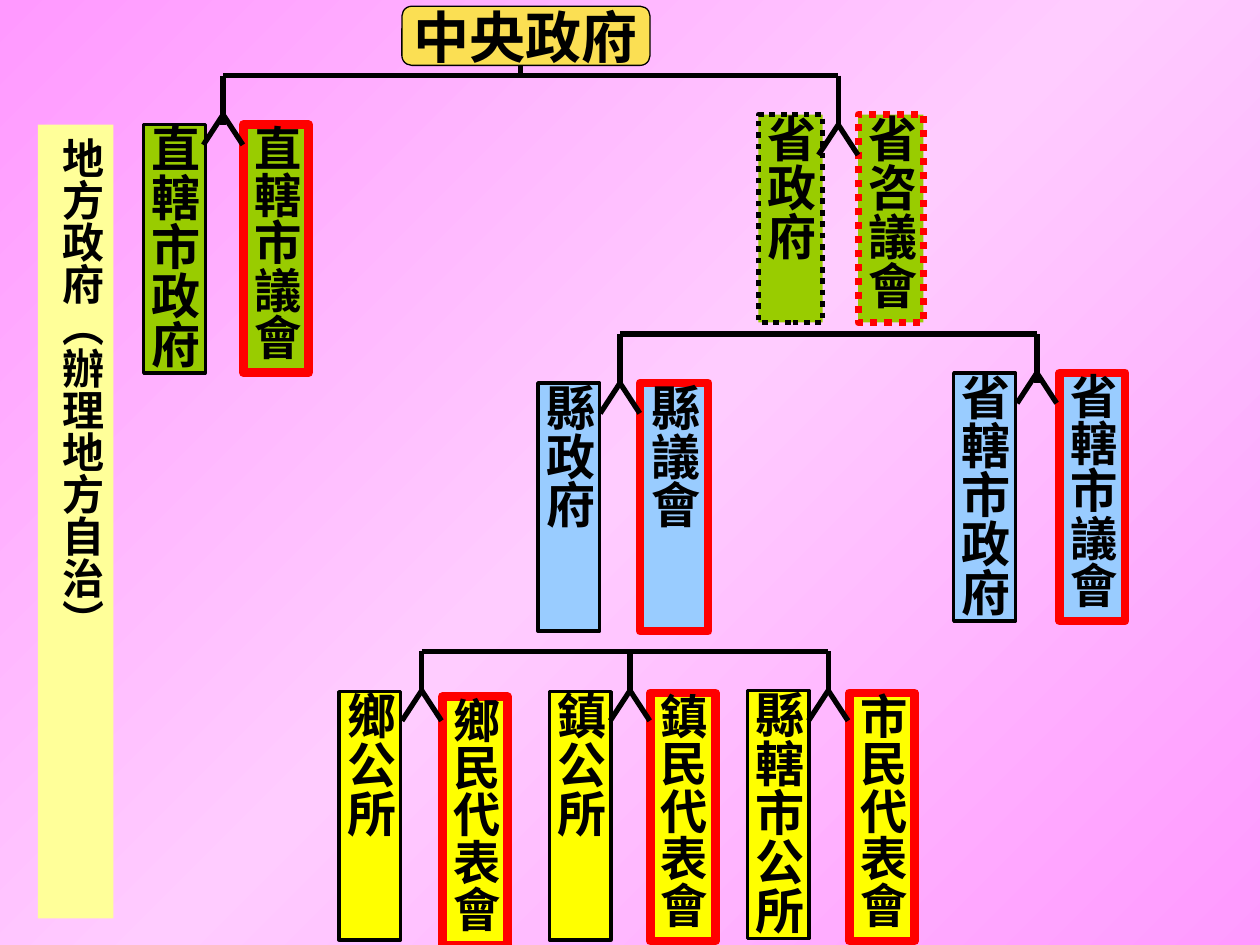
import copy
from dataclasses import dataclass

import pptx
import pptx.dml.color
import pptx.enum.dml
import pptx.enum.shapes
import pptx.enum.text
import pptx.oxml
import pptx.util

Pt = pptx.util.Pt
RGB = pptx.dml.color.RGBColor.from_string
ALIGN = pptx.enum.text.PP_ALIGN
ANCHOR = pptx.enum.text.MSO_ANCHOR
SHAPE = pptx.enum.shapes.MSO_SHAPE
DOTTED = pptx.enum.dml.MSO_LINE.ROUND_DOT


@dataclass(frozen=True)
class Theme:
    font: str = "Arial"
    ink: str = "000000"
    council: str = "FF0000"
    root: str = "FBDF53"
    province: str = "99CC00"
    county: str = "99CCFF"
    town: str = "FFFF00"
    band: str = "FFFF99"
    backdrop: tuple = ("FF99FF", "FFCCFF", "FF99FF")
    root_size: float = 32
    node_size: float = 28
    tight_size: float = 27
    band_size: float = 24
    link: float = 3


T = Theme()


@dataclass(frozen=True)
class Node:
    """One organ; councils are outlined in red."""
    text: str
    left: float
    top: float
    fill: str
    council: bool = False
    width: float = 0
    height: float = 141.8
    size: float = T.node_size
    dotted: bool = False
    align: ALIGN = ALIGN.CENTER


@dataclass(frozen=True)
class Branch:
    """A drop from a level's bar, ending in a fork."""
    x: float
    fork: float
    drop_end: float


@dataclass(frozen=True)
class Level:
    bar: float
    branches: tuple


NODES = (
    Node("直轄市政府", 82.1, 71.3, T.province, align=ALIGN.LEFT),
    Node("直轄市議會", 139, 71.3, T.province, True, size=T.tight_size, align=ALIGN.LEFT),
    Node("省政府", 433.4, 65.5, T.province, width=36.7, height=118.8, dotted=True),
    Node("省咨議會", 490.3, 65.5, T.province, True, height=118.8, dotted=True),
    Node("省轄市政府", 545, 213.1, T.county),
    Node("省轄市議會", 605.5, 213.1, T.county, True, size=T.tight_size),
    Node("縣議會", 365.8, 218.9, T.county, True, width=38.9),
    Node("縣政府", 307.4, 218.9, T.county),
    Node("縣轄市公所", 427, 394.6, T.town),
    Node("市民代表會", 485.3, 396, T.town, True, size=T.tight_size),
    Node("鎮民代表會", 371.5, 396, T.town, True, size=T.tight_size),
    Node("鄉民代表會", 252.7, 398.2, T.town, True, size=T.tight_size),
    Node("鄉公所", 193.7, 395.3, T.town),
    Node("鎮公所", 313.9, 395.3, T.town),
)

LEVELS = (
    Level(43.2, (Branch(127.5, 65.5, 71.3), Branch(479, 71.3, 71.3))),
    Level(190.8, (Branch(354.3, 218.9, 218.9), Branch(592.5, 213.1, 218.9))),
    Level(372.2, tuple(Branch(x, 394.6, 394.6) for x in (241, 360, 473.3))),
)
FORK_DX, FORK_DY = 11.3, 17.3


def add_box(slide, kind: SHAPE, box: tuple, text: str, size: float, fill: str,
            align: ALIGN, vertical: bool = True, inset: bool = False):
    s = slide.shapes.add_shape(kind, *map(Pt, box))
    s.shadow.inherit = False
    s.fill.solid()
    s.fill.fore_color.rgb = RGB(fill)
    s.line.fill.background()
    tf = s.text_frame
    tf.text = text
    tf.word_wrap = vertical
    tf.vertical_anchor = ANCHOR.TOP if inset else ANCHOR.MIDDLE
    if not inset:
        tf.margin_left = tf.margin_right = tf.margin_top = tf.margin_bottom = 0
    if vertical:
        tf.auto_size = pptx.enum.text.MSO_AUTO_SIZE.SHAPE_TO_FIT_TEXT
        s.element.xpath(".//a:bodyPr")[0].set("vert", "eaVert")
    p = tf.paragraphs[0]
    p.alignment = align
    f = p.runs[0].font
    f.name, f.size, f.bold = T.font, Pt(size), True
    f.color.rgb = RGB(T.ink)
    return s


def outline(s, color: str, width: float) -> None:
    s.line.color.rgb = RGB(color)
    s.line.width = Pt(width)


def add_node(slide, n: Node) -> None:
    width = n.width or (37.4 if n.council else 35.3)
    s = add_box(slide, SHAPE.RECTANGLE, (n.left, n.top, width, n.height),
                n.text, n.size, n.fill, n.align)
    solid, dots = (5, 4) if n.council else (2, 3.25)
    outline(s, T.council if n.council else T.ink, dots if n.dotted else solid)
    if n.dotted:
        s.line.dash_style = DOTTED


def add_link(slide, x1: float, y1: float, x2: float, y2: float,
             width: float = T.link) -> None:
    c = slide.shapes.add_connector(pptx.enum.shapes.MSO_CONNECTOR.STRAIGHT,
                                   *map(Pt, (x1, y1, x2, y2)))
    outline(c, T.ink, width)
    sp_pr = c.element.xpath("./p:spPr")[0]
    sp_pr.append(pptx.oxml.parse_xml(
        '<a:effectLst xmlns:a="http://schemas.openxmlformats.org/drawingml/2006/main"/>'))


def add_level(slide, level: Level) -> None:
    xs = [b.x for b in level.branches]
    add_link(slide, min(xs), level.bar, max(xs), level.bar)
    for b in level.branches:
        add_link(slide, b.x, level.bar, b.x, b.drop_end)
        for dx in (-FORK_DX, FORK_DX):
            add_link(slide, b.x, b.fork, b.x + dx, b.fork + FORK_DY)


def paint_background(slide) -> None:
    fill = slide.background.fill
    fill.gradient()
    fill.gradient_angle = 315
    first = slide.element.xpath(".//p:bg//a:gs")[0]
    first.addnext(copy.deepcopy(first))
    for i, (stop, color) in enumerate(zip(fill.gradient_stops, T.backdrop)):
        stop.position = i / 2
        stop.color.rgb = RGB(color)


def main() -> None:
    prs = pptx.Presentation()
    prs.slide_width, prs.slide_height = Pt(720), Pt(540)
    slide = prs.slides.add_slide(prs.slide_layouts[6])
    paint_background(slide)

    # Central government
    root = add_box(slide, SHAPE.FLOWCHART_ALTERNATE_PROCESS, (229.7, 3.6, 141.8, 33.8),
                   "中央政府", T.root_size, T.root, ALIGN.CENTER, vertical=False)
    outline(root, T.ink, 0.75)

    # Local organs and the tree that joins them
    for n in NODES:
        add_node(slide, n)
    for level in LEVELS:
        add_level(slide, level)
    add_link(slide, 297.4, 37.4, 297.4, 43.2, 3.25)

    # Side band
    add_box(slide, SHAPE.RECTANGLE, (21.6, 71.3, 43.2, 453.6),
            "地方政府（辦理地方自治）", T.band_size, T.band, ALIGN.JUSTIFY, inset=True)

    prs.save("out.pptx")


if __name__ == "__main__":
    main()
